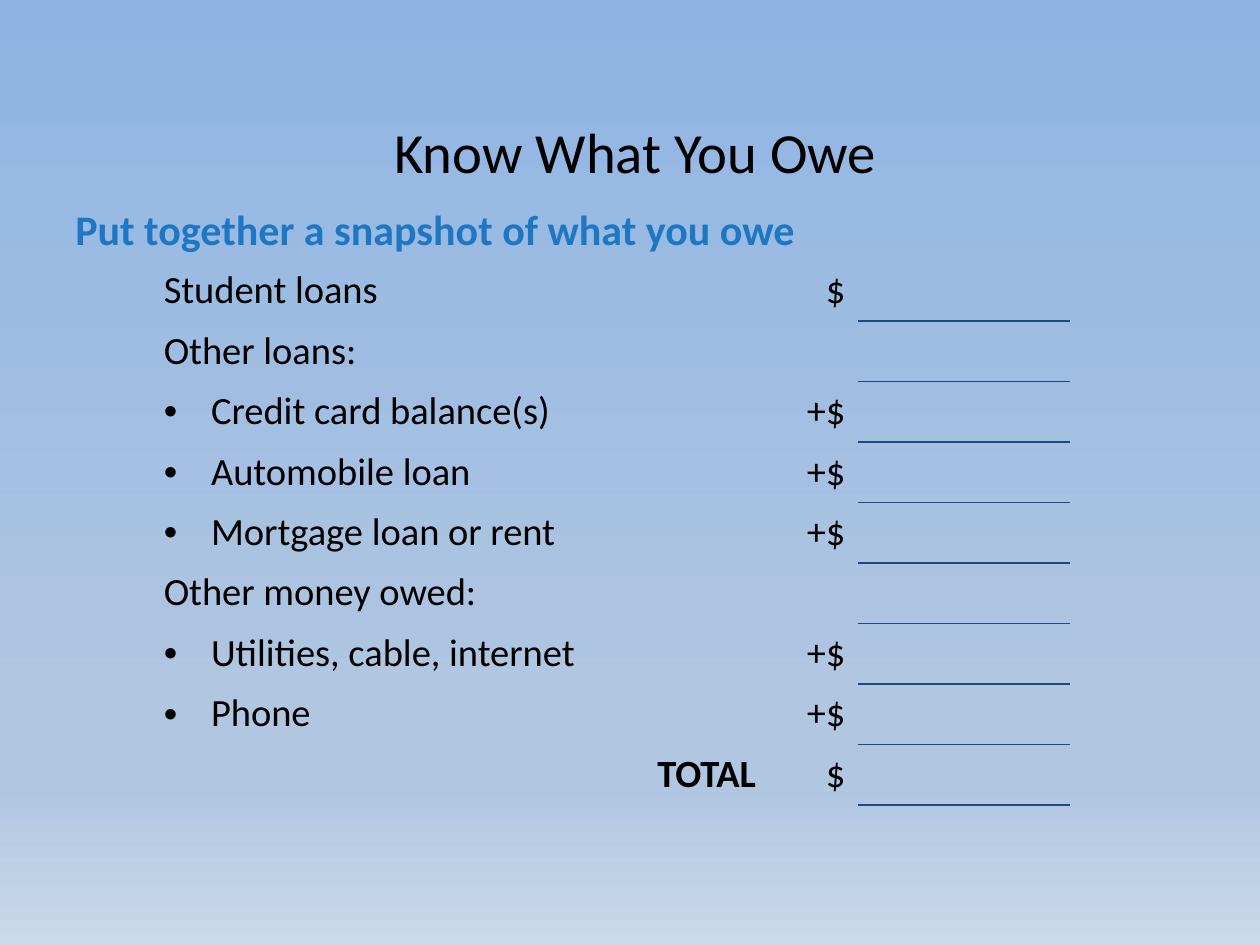
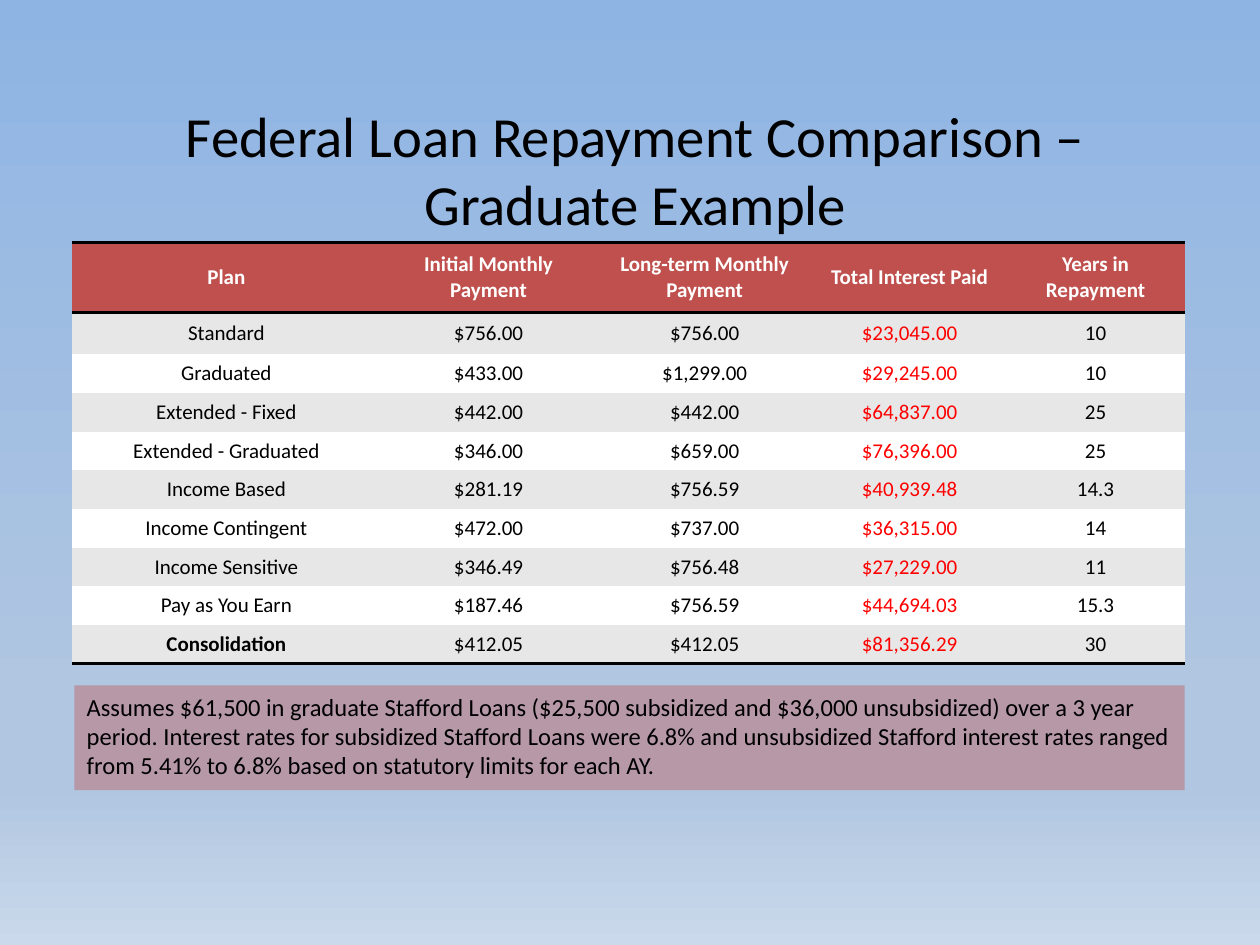
"""Build two slides on student debt: a worksheet and a plan comparison."""
from dataclasses import dataclass

from lxml import etree
from pptx import Presentation
from pptx.dml.color import RGBColor
from pptx.enum import shapes, text
from pptx.oxml import parse_xml
from pptx.oxml.ns import nsdecls, qn
from pptx.util import Pt


@dataclass(frozen=True)
class Theme:
    """Colours, type sizes and font shared by the slides."""
    font: str = "Calibri"
    ink: str = "000000"
    white: str = "FFFFFF"
    blue: str = "1F77C3"
    navy: str = "1F497D"
    brick: str = "C0504D"
    red: str = "FF0000"
    grey: str = "E7E7E7"
    title: float = 32.4
    lead: int = 24
    debt: int = 22
    note: int = 14
    cell: int = 12
    sky: tuple = ((0, "8EB4E3"), (74, "B0C6E1"), (83, "B0C6E1"), (100, "CAD9EB"))
    plain: str = "{2D5ABB26-0587-4C30-8999-92F81FD0307C}"


T = Theme()
LEFT, MID, RIGHT = text.PP_ALIGN.LEFT, text.PP_ALIGN.CENTER, text.PP_ALIGN.RIGHT

OWE = "Know What You Owe"
LEAD = "Put together a snapshot of what you owe"
DEBTS = [
    ("head", "Student loans", "$"),
    ("head", "Other loans:", ""),
    ("item", "Credit card balance(s)", "+$"),
    ("item", "Automobile loan", "+$"),
    ("item", "Mortgage loan or rent", "+$"),
    ("head", "Other money owed:", ""),
    ("item", "Utilities, cable, internet", "+$"),
    ("item", "Phone", "+$"),
    ("total", "TOTAL", "$"),
]

PLAN = "Federal Loan Repayment Comparison – Graduate Example"
HEADS = ("Plan", "Initial Monthly Payment", "Long-term Monthly Payment",
         "Total Interest Paid", "Years in Repayment")
PLANS = [
    ("Standard", "$756.00", "$756.00", "$23,045.00", "10"),
    ("Graduated", "$433.00", "$1,299.00", "$29,245.00", "10"),
    ("Extended - Fixed", "$442.00", "$442.00", "$64,837.00", "25"),
    ("Extended - Graduated", "$346.00", "$659.00", "$76,396.00", "25"),
    ("Income Based", "$281.19", "$756.59", "$40,939.48", "14.3"),
    ("Income Contingent", "$472.00", "$737.00", "$36,315.00", "14"),
    ("Income Sensitive", "$346.49", "$756.48", "$27,229.00", "11"),
    ("Pay as You Earn", "$187.46", "$756.59", "$44,694.03", "15.3"),
    ("Consolidation", "$412.05", "$412.05", "$81,356.29", "30"),
]
NOTE = ("Assumes $61,500 in graduate Stafford Loans ($25,500 subsidized and $36,000 "
        "unsubsidized) over a 3 year period. Interest rates for subsidized Stafford "
        "Loans were 6.8% and unsubsidized Stafford interest rates ranged from 5.41% "
        "to 6.8% based on statutory limits for each AY.")


def rgb(code):
    """Turn a hex code into a colour."""
    return RGBColor.from_string(code)


def write(frame, words, size, hue=T.ink, bold=False, align=LEFT):
    """Put one run in the first paragraph of a frame."""
    para = frame.paragraphs[0]
    para.alignment = align
    run = para.add_run()
    run.text = words
    font = run.font
    font.name, font.size, font.bold = T.font, Pt(size), bold
    font.color.rgb = rgb(hue)


def paint(prs):
    """Give the master its sky gradient."""
    fill = prs.slide_master.background.fill
    fill.gradient()
    fill.gradient_angle = 270
    stops = prs.slide_master.element.find(".//" + qn("a:gsLst"))
    for stop in list(stops):
        stops.remove(stop)
    for place, hue in T.sky:
        stop = etree.SubElement(stops, qn("a:gs"), pos=str(place * 1000))
        etree.SubElement(stop, qn("a:srgbClr"), val=hue)


def start(prs, words, top):
    """Add a slide with its title."""
    slide = prs.slides.add_slide(prs.slide_layouts[5])
    title = slide.shapes.title
    title.left, title.top, title.width, title.height = Pt(36), Pt(top), Pt(654), Pt(50.4)
    frame = title.text_frame
    frame.auto_size = text.MSO_AUTO_SIZE.NONE
    frame.vertical_anchor = text.MSO_ANCHOR.MIDDLE
    write(frame, words, T.title, align=MID)
    return slide


def grid(slide, left, top, cols, rows):
    """Add an unstyled table with the given column widths and row heights."""
    table = slide.shapes.add_table(len(rows), len(cols), Pt(left), Pt(top),
                                   Pt(sum(cols)), Pt(sum(rows))).table
    table.first_row = table.horz_banding = False
    table._tbl.tblPr.find(qn("a:tableStyleId")).text = T.plain
    for col, width in zip(table.columns, cols):
        col.width = Pt(width)
    for row, height in zip(table.rows, rows):
        row.height = Pt(height)
    return table


def rule(cell, side, hue, width):
    """Draw a line on the top (T) or bottom (B) side of a cell."""
    cell._tc.get_or_add_tcPr().insert(0, parse_xml(
        f'<a:ln{side} {nsdecls("a")} w="{Pt(width)}"><a:solidFill>'
        f'<a:srgbClr val="{hue}"/></a:solidFill></a:ln{side}>'))


def bullet(para, gap):
    """Give a paragraph a hanging bullet."""
    props = para._p.get_or_add_pPr()
    props.set("marL", str(Pt(gap)))
    props.set("indent", str(Pt(-gap)))
    etree.SubElement(props, qn("a:buFont"), typeface="Arial")
    etree.SubElement(props, qn("a:buChar"), char="•")


def debts(prs):
    """Build the worksheet of debts."""
    slide = start(prs, OWE, 61.2)
    box = slide.shapes.add_textbox(Pt(36), Pt(112.5), Pt(648), Pt(37))
    box.text_frame.word_wrap = True
    write(box.text_frame, LEAD, T.lead, T.blue, True)
    table = grid(slide, 86.4, 149, (352.8, 51.1, 121), [34.56] * len(DEBTS))
    for row, (kind, name, sign) in enumerate(DEBTS):
        label, mark, blank = (table.cell(row, col) for col in range(3))
        total = kind == "total"
        if kind == "item":
            bullet(label.text_frame.paragraphs[0], 27)
        write(label.text_frame, name, T.debt, bold=total, align=RIGHT if total else LEFT)
        if sign:
            write(mark.text_frame, sign, T.debt, align=RIGHT)
        rule(blank, "B", T.navy, 1)


def plans(prs):
    """Build the comparison of repayment plans."""
    slide = start(prs, PLAN, 71.3)
    note = slide.shapes.add_shape(shapes.MSO_SHAPE.RECTANGLE,
                                  Pt(42.5), Pt(391.7), Pt(634.5), Pt(59.8))
    note.shadow.inherit = False
    note.line.fill.background()
    note.fill.solid()
    note.fill.fore_color.rgb = rgb(T.brick)
    tint = note.fill._xPr.find(".//" + qn("a:srgbClr"))
    etree.SubElement(tint, qn("a:alpha"), val="39000")
    note.text_frame.word_wrap = True
    note.text_frame.vertical_anchor = text.MSO_ANCHOR.TOP
    write(note.text_frame, NOTE, T.note)

    table = grid(slide, 41.2, 138.5, (176.4, 123.2, 123.8, 110.4, 102.2),
                 [40, 24] + [22.1] * (len(PLANS) - 1))
    for row, line in enumerate([HEADS] + PLANS):
        head, last = row == 0, row == len(PLANS)
        back = T.brick if head else T.grey if row % 2 else T.white
        for col, words in enumerate(line):
            cell = table.cell(row, col)
            cell.vertical_anchor = text.MSO_ANCHOR.MIDDLE
            cell.fill.solid()
            cell.fill.fore_color.rgb = rgb(back)
            hue = T.white if head else T.red if col == 3 else T.ink
            write(cell.text_frame, words, T.cell, hue, head or (last and col == 0), MID)
            if head or last:
                rule(cell, "B", T.ink, 2)
            if head:
                rule(cell, "T", T.ink, 2)


def main():
    """Build and save the slides."""
    prs = Presentation()
    prs.slide_width, prs.slide_height = Pt(720), Pt(540)
    paint(prs)
    debts(prs)
    plans(prs)
    prs.save("out.pptx")


if __name__ == "__main__":
    main()
